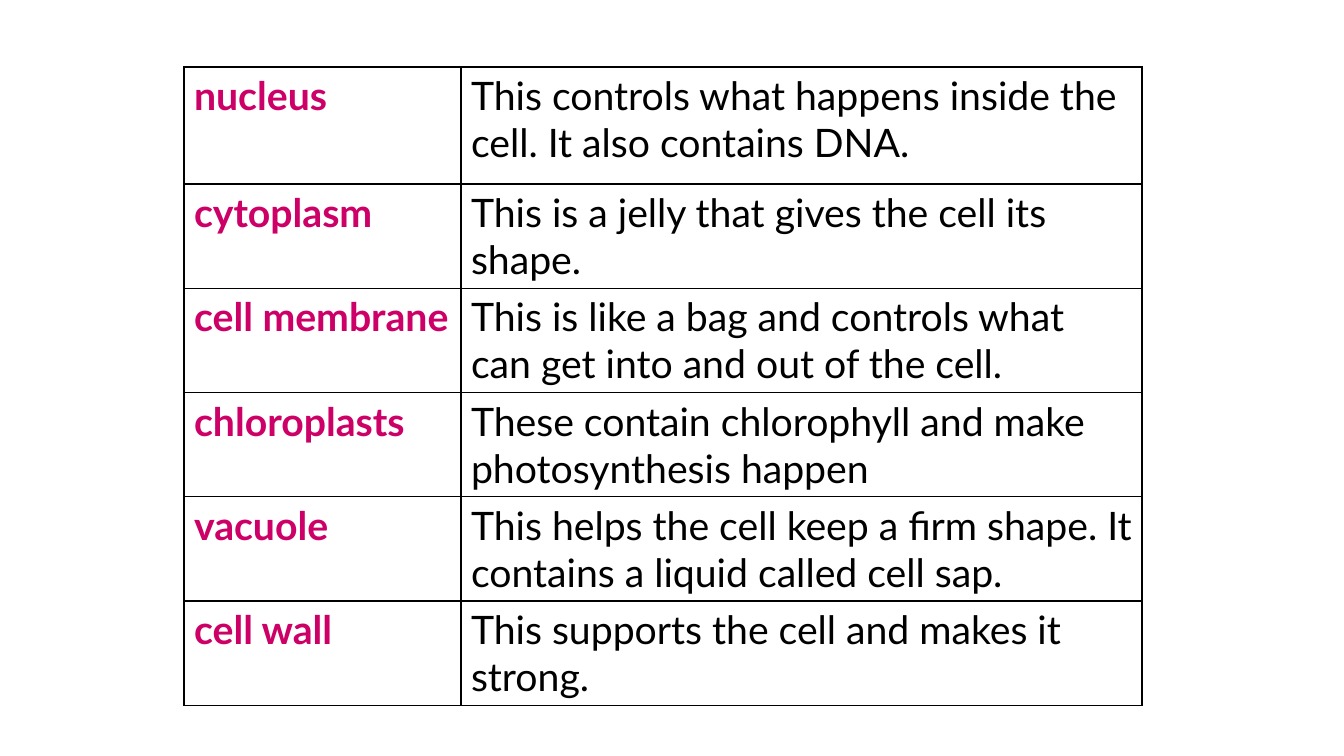
"""Build a slide with a table of cell parts and what each one does."""
import pptx
import pptx.dml.color
import pptx.oxml
import pptx.oxml.ns
import pptx.util

CELL_PARTS = [
    ("nucleus", "This controls what happens inside the cell. It also contains DNA."),
    ("cytoplasm", "This is a jelly that gives the cell its shape."),
    ("cell membrane", "This is like a bag and controls what can get into and out of the cell."),
    ("chloroplasts", "These contain chlorophyll and make photosynthesis happen"),
    ("vacuole", "This helps the cell keep a firm shape. It contains a liquid called cell sap."),
    ("cell wall", "This supports the cell and makes it strong."),
]

PINK = pptx.dml.color.RGBColor(0xCC, 0x00, 0x66)
BLACK = pptx.dml.color.RGBColor(0x00, 0x00, 0x00)

PX = 914400 / 100.8
SLIDE_SIZE = (1344, 756)
TABLE_LEFT, TABLE_TOP = 184, 67
COLUMN_WIDTHS = (277, 681)
FIRST_ROW_HEIGHT, ROW_HEIGHT = 117, 104
BORDER_WIDTH = pptx.util.Pt(1)

FONT = {"name": "Lato", "size": pptx.util.Pt(28)}
COLUMN_FORMATS = [({**FONT, "bold": True}, PINK), ({**FONT, "bold": False}, BLACK)]
PLAIN_TABLE = {"first_row": False, "horz_banding": False}


def px(length):
    """Turn a length in px into EMU."""
    return pptx.util.Emu(round(length * PX))


def set_format(target, values):
    """Set each attribute named in values on the target."""
    for name, value in values.items():
        setattr(target, name, value)


def add_borders(cell):
    """Draw a black line on all four sides of a cell."""
    properties = cell._tc.get_or_add_tcPr()
    for side in "LRTB":
        properties.append(pptx.oxml.parse_xml(
            f'<a:ln{side} {pptx.oxml.ns.nsdecls("a")} w="{BORDER_WIDTH}">'
            f'<a:solidFill><a:srgbClr val="{BLACK}"/></a:solidFill></a:ln{side}>'))


def fill_cell(cell, text, font_format, color):
    """Write formatted text into a bordered cell without a fill."""
    add_borders(cell)
    cell.fill.background()
    run = cell.text_frame.paragraphs[0].add_run()
    run.text = text
    set_format(run.font, font_format)
    run.font.color.rgb = color


def main():
    """Build and save the presentation."""
    presentation = pptx.Presentation()
    presentation.slide_width, presentation.slide_height = map(px, SLIDE_SIZE)
    slide = presentation.slides.add_slide(presentation.slide_layouts[6])

    row_heights = [FIRST_ROW_HEIGHT] + [ROW_HEIGHT] * (len(CELL_PARTS) - 1)
    table = slide.shapes.add_table(
        len(CELL_PARTS), len(COLUMN_WIDTHS), px(TABLE_LEFT), px(TABLE_TOP),
        px(sum(COLUMN_WIDTHS)), px(sum(row_heights))).table
    set_format(table, PLAIN_TABLE)
    for column, width in zip(table.columns, COLUMN_WIDTHS):
        column.width = px(width)
    for row, height, texts in zip(table.rows, row_heights, CELL_PARTS):
        row.height = px(height)
        for cell, text, (font_format, color) in zip(row.cells, texts, COLUMN_FORMATS):
            fill_cell(cell, text, font_format, color)

    presentation.save("out.pptx")


if __name__ == "__main__":
    main()
